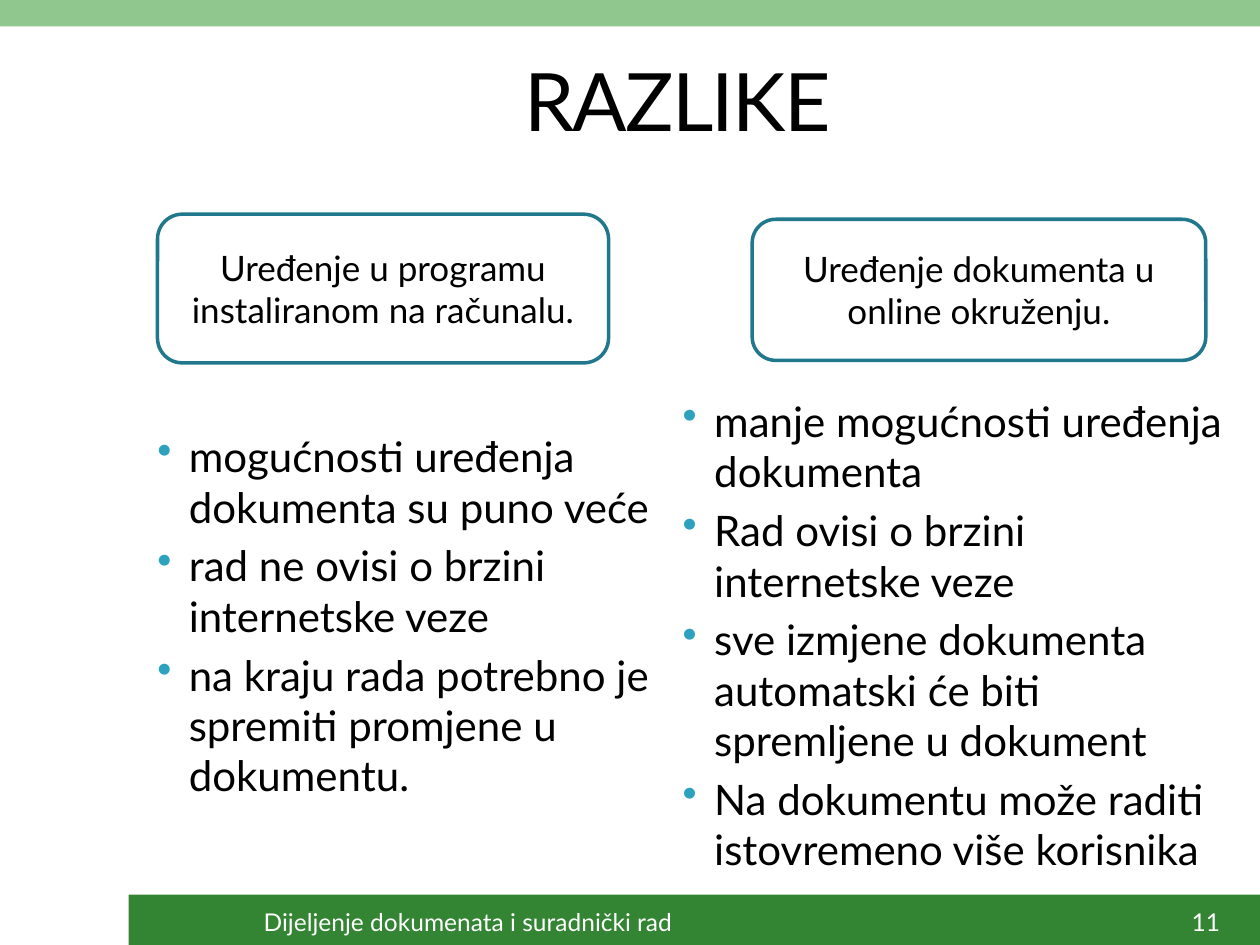
"""Build a slide comparing installed and online document editing."""
from pptx import Presentation, util as u
from pptx.dml.color import RGBColor
from pptx.enum import shapes, text
from pptx.oxml.ns import qn
from lxml import etree

KIND = shapes.MSO_SHAPE


def paint(fill, hue, alpha=None):
    fill.solid()
    fill.fore_color.rgb = RGBColor.from_string(hue)
    if alpha:
        node = fill._xPr.find(".//" + qn("a:srgbClr"))
        etree.SubElement(node, qn("a:alpha"), val=str(alpha * 1000))


class Deck:
    font = "Lato"
    ink = "000000"
    white = "FFFFFF"
    edge = "21788D"
    dot = "2DA2BF"

    def __init__(self, wide, high):
        self.prs = Presentation()
        self.prs.slide_width = u.Inches(wide)
        self.prs.slide_height = u.Inches(high)
        self.slide = self.prs.slides.add_slide(self.prs.slide_layouts[6])

    def style(self, para, size, hue):
        for run in para.runs:
            run.font.name = self.font
            run.font.size = u.Pt(size)
            paint(run.font.fill, hue)

    def center(self, shape, words, size, hue):
        frame = shape.text_frame
        frame.word_wrap = True
        frame.vertical_anchor = text.MSO_ANCHOR.MIDDLE
        frame.text = words
        para = frame.paragraphs[0]
        para.alignment = text.PP_ALIGN.CENTER
        self.style(para, size, hue)
        return para

    def shape(self, kind, box, hue=None, alpha=None):
        shape = self.slide.shapes.add_shape(kind, *map(u.Inches, box))
        shape.shadow.inherit = False
        shape.line.fill.background()
        if hue:
            paint(shape.fill, hue, alpha)
        else:
            shape.fill.background()
        return shape

    def bar(self, box, hue, alpha):
        self.shape(KIND.RECTANGLE, box, hue, alpha)

    def label(self, box, words, size, hue):
        area = self.slide.shapes.add_textbox(*map(u.Inches, box))
        return self.center(area, words, size, hue)

    def title(self, box, words):
        para = self.label(box, words, 46, self.ink)
        para.runs[0]._r.get_or_add_rPr().set("spc", "-100")

    def number(self, box, words):
        shape = self.shape(KIND.DOUBLE_BRACKET, box)
        shape.adjustments[0] = 0.18
        frame = shape.text_frame
        frame.margin_left = frame.margin_right = 0
        frame.margin_top = frame.margin_bottom = 0
        self.center(shape, words, 14, self.white)

    def card(self, box, words):
        shape = self.shape(KIND.ROUNDED_RECTANGLE, box, self.white)
        paint(shape.line.fill, self.edge)
        shape.line.width = u.Pt(2)
        self.center(shape, words, 20, self.ink)

    def list(self, box, items):
        frame = self.slide.shapes.add_textbox(*map(u.Inches, box)).text_frame
        frame.word_wrap = True
        frame.text = "\n".join(items)
        for i, para in enumerate(frame.paragraphs):
            props = para._p.get_or_add_pPr()
            props.set("marL", str(u.Inches(0.38)))
            props.set("indent", str(u.Inches(-0.25)))
            tint = etree.SubElement(props, qn("a:buClr"))
            etree.SubElement(tint, qn("a:srgbClr"), val=self.dot)
            etree.SubElement(props, qn("a:buChar"), char="•")
            if i:
                para.space_before = u.Pt(4.8)
            self.style(para, 24, self.ink)

    def save(self):
        self.prs.save("out.pptx")


def main():
    deck = Deck(10, 7.5)
    deck.bar((1.02, 7.1, 8.98, 0.43), "006600", 80)
    deck.bar((0, 0, 10, 0.21), "339933", 55)
    deck.title((0.99, 0.36, 8.77, 0.86), "RAZLIKE")
    deck.list((1.02, 3.37, 4.39, 3.67), [
        "mogućnosti uređenja dokumenta su puno veće",
        "rad ne ovisi o brzini internetske veze",
        "na kraju rada potrebno je spremiti promjene u dokumentu.",
    ])
    deck.number((9.38, 7.13, 0.38, 0.37), "11")
    deck.label((1.02, 7.1, 5.39, 0.43),
               "Dijeljenje dokumenata i suradnički rad", 14, deck.white)
    deck.list((5.19, 3.09, 4.68, 3.91), [
        "manje mogućnosti uređenja dokumenta",
        "Rad ovisi o brzini internetske veze",
        "sve izmjene dokumenta automatski će biti spremljene u dokument",
        "Na dokumentu može raditi istovremeno više korisnika",
    ])
    deck.card((5.97, 1.74, 3.6, 1.12),
              "Uređenje dokumenta u online okruženju.")
    deck.card((1.25, 1.7, 3.58, 1.18),
              "Uređenje u programu instaliranom na računalu.")
    deck.save()


if __name__ == "__main__":
    main()
